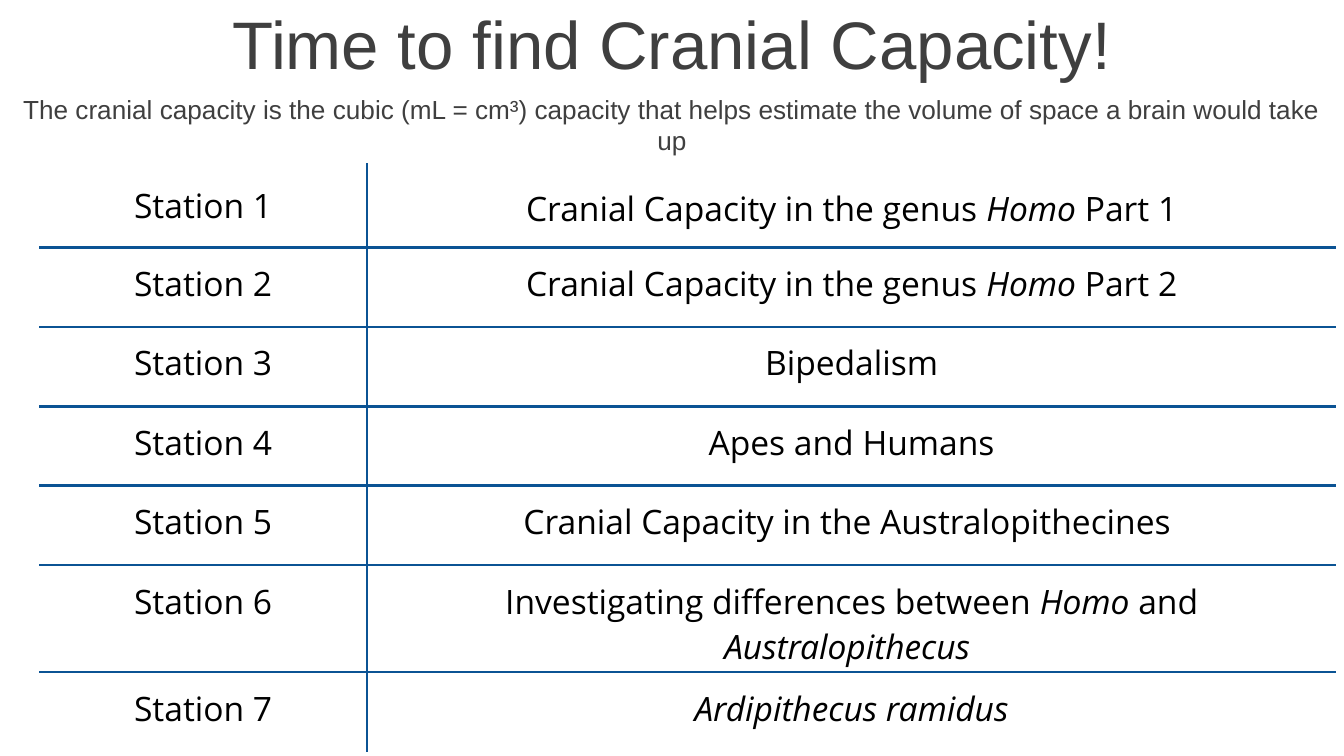
from lxml import etree
from pptx import Presentation
from pptx.dml.color import RGBColor
from pptx.enum.text import MSO_ANCHOR, PP_ALIGN
from pptx.oxml.ns import qn
from pptx.util import Cm, Pt

CENTER = PP_ALIGN.CENTER
MIDDLE = MSO_ANCHOR.MIDDLE
TOP = MSO_ANCHOR.TOP

COLORS = {"heading": "3F3F3F", "body": "000000", "rule": "0B5394"}
HEADING_FRAME = {
    "word_wrap": True,
    "vertical_anchor": MIDDLE,
    "margin_left": Cm(0.25),
    "margin_right": Cm(0.25),
    "margin_top": Cm(0.13),
    "margin_bottom": Cm(0.13),
}
CELL_MARGINS = {
    "margin_left": Cm(0.25),
    "margin_right": Cm(0.25),
    "margin_top": Cm(0.25),
    "margin_bottom": Cm(0.25),
}
TITLE_FONT = {"name": "Arial", "size": Pt(36)}
SUBTITLE_FONT = {"name": "Arial", "size": Pt(14)}
CELL_FONT = {"name": "Open Sans", "size": Pt(18)}

TITLE = "Time to find Cranial Capacity!"
SUBTITLE = (
    "The cranial capacity is the cubic (mL = cm³) capacity that helps "
    "estimate the volume of space a brain would take up"
)
TOPICS = [
    "Cranial Capacity in the genus *Homo *Part 1",
    "Cranial Capacity in the genus *Homo *Part 2",
    "Bipedalism",
    "Apes and Humans",
    "Cranial Capacity in the Australopithecines ",
    "Investigating differences between *Homo* and *Australopithecus *",
    "*Ardipithecus ramidus*",
]
COLUMN_WIDTHS = [Cm(6.2), Cm(18.31)]
FIRST_ROW_HEIGHT = Cm(1.59)
ROW_HEIGHT = Cm(1.5)


def set_format(target, values):
    for name, value in values.items():
        setattr(target, name, value)


def write_text(text_frame, text, font, color):
    paragraph = text_frame.paragraphs[0]
    paragraph.alignment = CENTER
    for index, part in enumerate(text.split("*")):
        if part:
            run = paragraph.add_run()
            run.text = part
            set_format(run.font, {**font, "italic": index % 2 == 1})
            run.font.color.rgb = RGBColor.from_string(COLORS[color])
    return paragraph


def add_heading(slide, text, top, height, font):
    box = slide.shapes.add_textbox(Cm(0), top, Cm(25.4), height)
    set_format(box.text_frame, HEADING_FRAME)
    write_text(box.text_frame, text, font, "heading")


def set_borders(cell, visible_sides):
    properties = cell._tc.get_or_add_tcPr()
    for side in "LRTB":
        line = etree.SubElement(properties, qn(f"a:ln{side}"), w=str(Pt(1.5)))
        if side in visible_sides:
            fill = etree.SubElement(line, qn("a:solidFill"))
            etree.SubElement(fill, qn("a:srgbClr"), val=COLORS["rule"])
        else:
            etree.SubElement(line, qn("a:noFill"))


def add_station_table(slide, topics):
    last = len(topics) - 1
    height = FIRST_ROW_HEIGHT + last * ROW_HEIGHT
    frame = slide.shapes.add_table(
        len(topics), 2, Cm(0.74), Cm(3.09), sum(COLUMN_WIDTHS), height
    )
    table = frame.table
    set_format(table, {"first_row": False, "horz_banding": False})
    for column, width in zip(table.columns, COLUMN_WIDTHS):
        column.width = width
    for row_index, topic in enumerate(topics):
        row = table.rows[row_index]
        row.height = ROW_HEIGHT if row_index else FIRST_ROW_HEIGHT
        horizontal = ("T" if row_index else "") + ("B" if row_index < last else "")
        texts = [f"Station {row_index + 1}", topic]
        for cell, text, vertical in zip(row.cells, texts, "RL"):
            set_format(cell, CELL_MARGINS)
            cell.vertical_anchor = TOP if row_index else MIDDLE
            set_borders(cell, vertical + horizontal)
            cell.fill.background()
            write_text(cell.text_frame, text, CELL_FONT, "body")
    table.cell(0, 1).text_frame.paragraphs[0].line_spacing = 1.15


def main():
    presentation = Presentation()
    set_format(presentation, {"slide_width": Cm(25.4), "slide_height": Cm(14.29)})
    slide = presentation.slides.add_slide(presentation.slide_layouts[6])
    add_heading(slide, TITLE, Cm(0), Cm(1.6), TITLE_FONT)
    add_heading(slide, SUBTITLE, Cm(1.96), Cm(0.79), SUBTITLE_FONT)
    add_station_table(slide, TOPICS)
    presentation.save("out.pptx")


if __name__ == "__main__":
    main()
